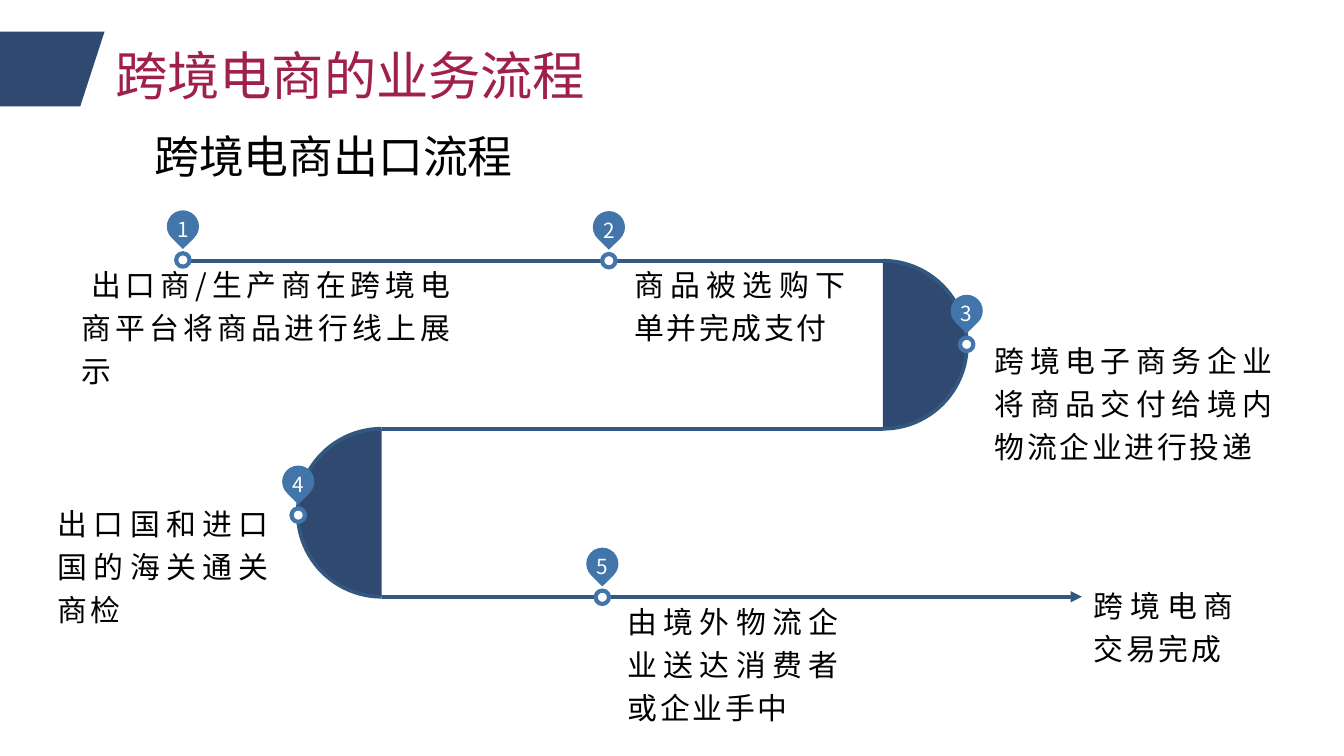
from dataclasses import dataclass
from lxml.etree import SubElement
from pptx import Presentation
from pptx.dml.color import RGBColor as Color
from pptx.enum.shapes import MSO_CONNECTOR as Connector, MSO_SHAPE as Preset
from pptx.enum.text import PP_ALIGN as Align
from pptx.oxml.ns import qn
from pptx.util import Pt


@dataclass(frozen=True)
class Theme:
    font: str = "Noto Sans CJK SC"
    navy: Color = Color.from_string("304971")
    track: Color = Color.from_string("32587F")
    pin: Color = Color.from_string("4276AA")
    title: Color = Color.from_string("A0204C")
    ink: Color = Color.from_string("000000")
    paper: Color = Color.from_string("FFFFFF")
    title_size: float = 28
    subtitle_size: float = 24
    body_size: float = 16
    number_size: float = 11.1
    spacing: float = 1.2


THEME = Theme()


def style(shape, fill, line=None, width=0):
    shape.shadow.inherit = False
    shape.fill.solid()
    shape.fill.fore_color.rgb = fill
    if line is None:
        shape.line.fill.background()
    else:
        shape.line.color.rgb = line
        shape.line.width = Pt(width)


def add_text(slide, box, text, size, color, align=Align.LEFT, wrap=True,
             insets=(7.2, 3.6, 7.2, 3.6), line_spacing=None, tracking=0, indent=0):
    frame = slide.shapes.add_textbox(*map(Pt, box)).text_frame
    frame.word_wrap = wrap
    frame.margin_left, frame.margin_top, frame.margin_right, frame.margin_bottom = map(Pt, insets)
    paragraph = frame.paragraphs[0]
    paragraph.text = text
    paragraph.alignment = align
    paragraph.line_spacing = line_spacing
    font = paragraph.font
    font.size, font.name, font.color.rgb = Pt(size), THEME.font, color
    properties = paragraph._p.pPr
    if indent:
        properties.set("indent", str(Pt(indent)))
    defaults = properties.find(qn("a:defRPr"))
    if tracking:
        defaults.set("spc", str(round(tracking * 100)))
    SubElement(defaults, qn("a:ea"), typeface=THEME.font)


def add_header(slide, left, top, width, height):
    builder = slide.shapes.build_freeform(left, top, scale=Pt(1))
    builder.add_line_segments([(left + width, top), (left + width * 0.76, top + height),
                               (left, top + height)])
    style(builder.convert_to_shape(), THEME.navy)
    add_text(slide, (left + 54.7, top + 2.9, 325, 41), "跨境电商的业务流程",
             THEME.title_size, THEME.title)
    add_text(slide, (left + 75.6, top + 49, 251, 36), "跨境电商出口流程",
             THEME.subtitle_size, THEME.ink)


def add_line(slide, start, end, y, head=None, tail=None):
    line = slide.shapes.add_connector(Connector.STRAIGHT, Pt(start), Pt(y), Pt(end), Pt(y))
    line.line.color.rgb = THEME.track
    line.line.width = Pt(2)
    outline = line.line._get_or_add_ln()
    for tag, kind in (("a:headEnd", head), ("a:tailEnd", tail)):
        if kind:
            SubElement(outline, qn(tag), type=kind)
    SubElement(line._element.spPr, qn("a:effectLst"))


def add_bend(slide, center, top, size, angles):
    arc = slide.shapes.add_shape(Preset.ARC, Pt(center - size / 2), Pt(top), Pt(size), Pt(size))
    arc.adjustments[0], arc.adjustments[1] = angles
    style(arc, THEME.navy, THEME.track, 2)


def add_track(slide, left, top, width, height):
    row = height / 2
    near, far = left + 106.5, left + 375
    up, down = 162, 54
    add_line(slide, left, far, top, head="oval")
    add_bend(slide, far, top, row, (up, down))
    add_line(slide, far, near, top + row)
    add_bend(slide, near, top + row, row, (down, up))
    add_line(slide, near, left + width, top + height, tail="triangle")


def add_pin(slide, x, y, number):
    drop, dot, rise = 17.2, 7.2, 18
    marker = slide.shapes.add_shape(Preset.TEAR, Pt(x - drop / 2), Pt(y - rise - drop / 2),
                                    Pt(drop), Pt(drop))
    marker.rotation = 135
    style(marker, THEME.pin)
    add_text(slide, (x - 10.5, y - rise - 11.5, 21, 23), str(number), THEME.number_size,
             THEME.paper, Align.CENTER, wrap=False, line_spacing=THEME.spacing)
    ring = slide.shapes.add_shape(Preset.OVAL, Pt(x - dot / 2), Pt(y - dot / 2), Pt(dot), Pt(dot))
    style(ring, THEME.paper, THEME.pin, 2.25)


def add_description(slide, box, text, insets=(5, 0, 7.2, 3.6), indent=0):
    add_text(slide, box, text, THEME.body_size, THEME.ink, Align.JUSTIFY, insets=insets,
             line_spacing=THEME.spacing, tracking=1.5, indent=indent)


def add_process(slide, left, top, width, height):
    add_track(slide, left, top, width, height)
    steps = [
        ((98, 139.3), (38.9, 139, 211, 67.7), "出口商/生产商在跨境电商平台将商品进行线上展示", 5),
        ((326.2, 139.7), (334.8, 139, 126.7, 62), "商品被选购下单并完成支付", 0),
        ((517.9, 184.5), (527.8, 180, 162.7, 90), "跨境电子商务企业将商品交付给境内物流企业进行投递", 0),
        ((159.8, 276), (25.9, 267.1, 126.7, 74), "出口国和进口国的海关通关商检", 0),
        ((322.7, 320), (331.2, 319.7, 126.7, 62), "由境外物流企业送达消费者或企业手中", 0),
    ]
    for number, (point, box, text, indent) in enumerate(steps, 1):
        add_pin(slide, *point, number)
        add_description(slide, box, text, indent=indent)
    add_description(slide, (left + width - 0.7, top + height - 12.2, 90.7, 62),
                    "跨境电商交易完成", insets=(7.2, 3.6, 7.2, 0))


def main():
    presentation = Presentation()
    presentation.slide_width, presentation.slide_height = Pt(720), Pt(405)
    slide = presentation.slides.add_slide(presentation.slide_layouts[6])
    add_header(slide, 0, 16.6, 56.5, 40.5)
    add_process(slide, 98, 139.7, 481.6, 180)
    presentation.save("out.pptx")


if __name__ == "__main__":
    main()
